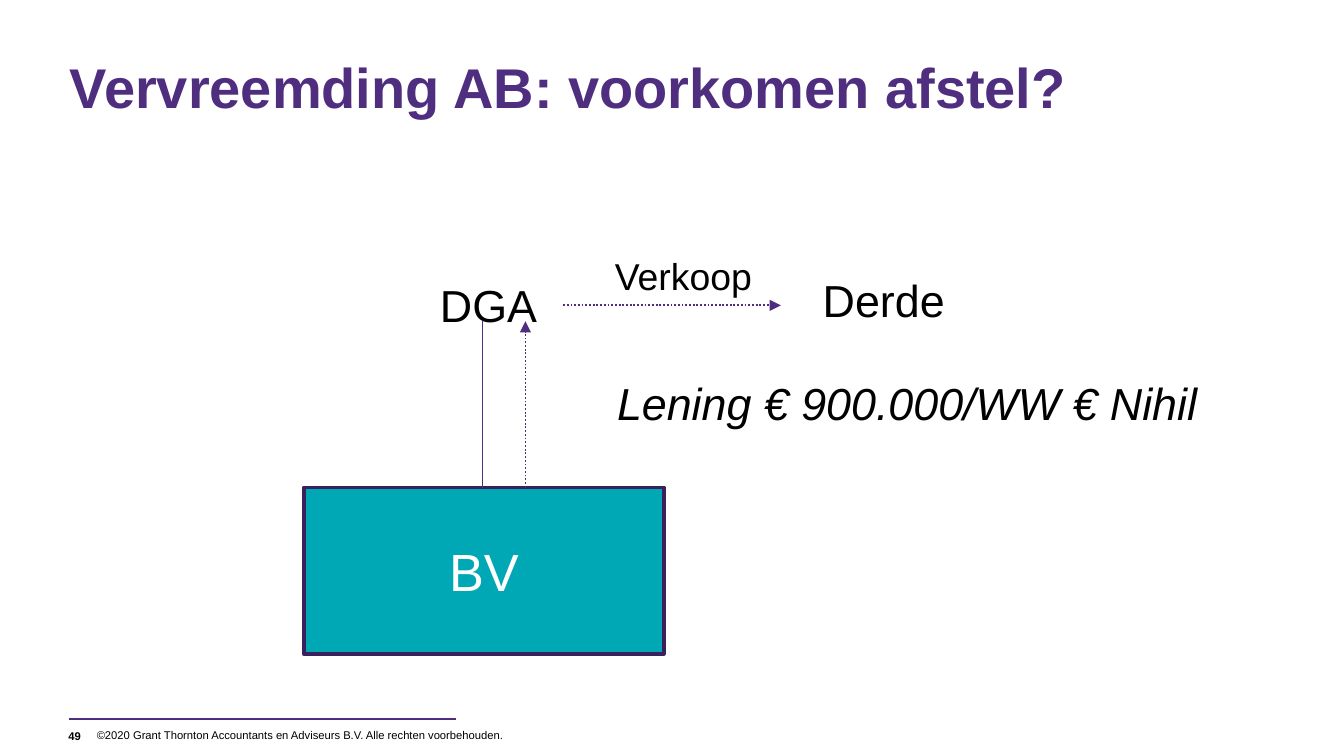
from lxml.etree import SubElement
from pptx import Presentation
from pptx.dml.color import RGBColor
from pptx.enum.dml import MSO_LINE
from pptx.enum.shapes import MSO_CONNECTOR, MSO_SHAPE
from pptx.enum.text import MSO_ANCHOR, PP_ALIGN
from pptx.oxml.ns import qn
from pptx.util import Inches, Pt

WIDTH = 10
HEIGHT = WIDTH * 9 / 16
COLOURS = {
    "purple": "4F2D7F",
    "dark": "3A215E",
    "teal": "00A7B5",
    "white": "FFFFFF",
    "black": "000000",
}


def colour(name):
    return RGBColor.from_string(COLOURS[name])


def across(percent):
    return Inches(WIDTH * percent / 100)


def down(percent):
    return Inches(HEIGHT * percent / 100)


def place(left, top, width, height):
    """Turn percentages of the slide into a position and size."""
    return across(left), down(top), across(width), down(height)


def write(box, text, size=24, ink="black", bold=False, italic=False,
          align=PP_ALIGN.LEFT, anchor=MSO_ANCHOR.MIDDLE, insets=None):
    frame = box.text_frame
    frame.word_wrap = True
    frame.vertical_anchor = anchor
    if insets is not None:
        across_inset, down_inset = insets
        frame.margin_left = frame.margin_right = Inches(across_inset)
        frame.margin_top = frame.margin_bottom = Inches(down_inset)
    para = frame.paragraphs[0]
    para.alignment = align
    span = para.add_run()
    span.text = text
    span.font.name = "Arial"
    span.font.size = Pt(size)
    span.font.bold = bold
    span.font.italic = italic
    span.font.color.rgb = colour(ink)


def add_label(page, area, text, **style):
    box = page.shapes.add_textbox(*place(*area))
    write(box, text, **style)


def add_party(page, area, text, fill=None, border="white", **style):
    box = page.shapes.add_shape(MSO_SHAPE.RECTANGLE, *place(*area))
    box.shadow.inherit = False
    if fill:
        box.fill.solid()
        box.fill.fore_color.rgb = colour(fill)
    else:
        box.fill.background()
    box.line.color.rgb = colour(border)
    box.line.width = Pt(2)
    write(box, text, align=PP_ALIGN.CENTER, **style)


def add_line(page, start, end, weight=1, arrow=False):
    """Draw a solid line, or a dotted one with an arrowhead at its end."""
    line = page.shapes.add_connector(
        MSO_CONNECTOR.STRAIGHT,
        across(start[0]), down(start[1]), across(end[0]), down(end[1]))
    line.line.color.rgb = colour("purple")
    line.line.width = Pt(weight)
    if arrow:
        line.line.dash_style = MSO_LINE.ROUND_DOT
        outline = line.line._get_or_add_ln()
        SubElement(outline, qn("a:tailEnd"), type="triangle")
    SubElement(line._element.spPr, qn("a:effectLst"))


def add_footer(page):
    add_label(page, (7.2, 95.4, 32.9, 3.6),
              "©2020 Grant Thornton Accountants en Adviseurs B.V. "
              "Alle rechten voorbehouden.", size=6, insets=(0, 0.05))
    add_line(page, (5.1, 95.1), (33.9, 95.1), weight=1.5)
    add_label(page, (5.1, 95.5, 2, 3.6), "49", size=6, bold=True,
              insets=(0, 0))


def add_structure(page):
    dga_bottom, bv_top = 42.5, 64.5
    add_party(page, (22.6, bv_top, 26.8, 22), "BV", fill="teal",
              border="dark", size=28, ink="white")
    add_party(page, (42.5, 46.2, 50, 14.2), "Lening € 900.000/WW € Nihil",
              italic=True)
    add_party(page, (28.5, 34.7, 15.7, 11.2), "DGA")
    add_party(page, (41.6, 30.8, 18.5, 11.2), "Verkoop", size=20)
    add_party(page, (57.9, 34, 15.7, 11.2), "Derde")
    add_line(page, (35.9, dga_bottom), (35.9, bv_top))
    add_line(page, (39.1, bv_top), (39.1, dga_bottom), arrow=True)
    add_line(page, (41.9, 40.4), (58.1, 40.4), arrow=True)


def main():
    deck = Presentation()
    deck.slide_width, deck.slide_height = Inches(WIDTH), Inches(HEIGHT)
    page = deck.slides.add_slide(deck.slide_layouts[6])
    add_footer(page)
    add_label(page, (5.2, 6.9, 89.7, 16.4),
              "Vervreemding AB: voorkomen afstel?", size=30, ink="purple",
              bold=True, anchor=MSO_ANCHOR.TOP, insets=(0, 0))
    add_structure(page)
    deck.save("out.pptx")


if __name__ == "__main__":
    main()
